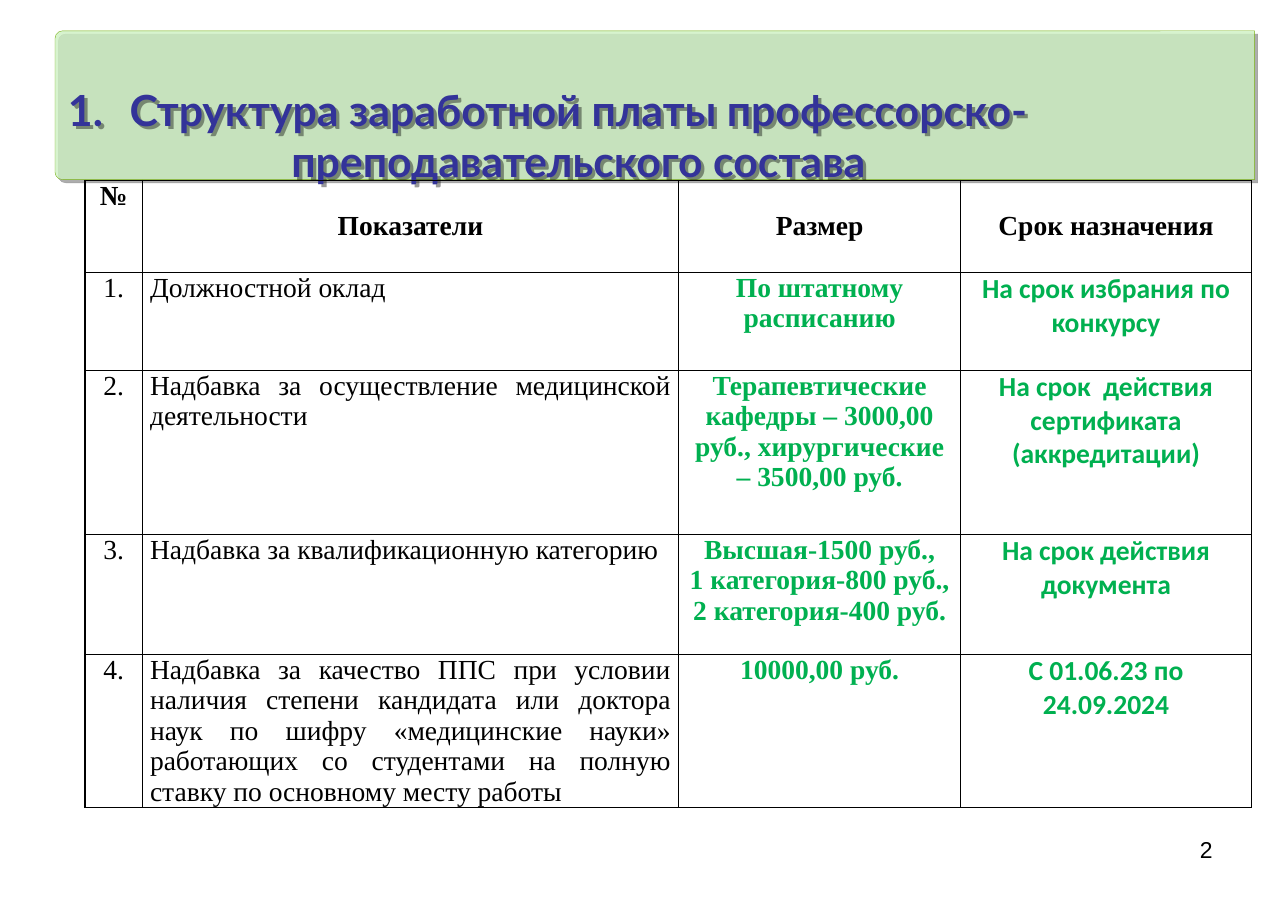
from lxml.etree import SubElement
from pptx import Presentation
from pptx.dml.color import RGBColor
from pptx.enum.shapes import MSO_SHAPE as Shape
from pptx.enum.text import MSO_ANCHOR as Anchor, MSO_AUTO_SIZE as AutoSize, PP_ALIGN as Align
from pptx.oxml import parse_xml
from pptx.oxml.ns import nsdecls, qn
from pptx.util import Cm, Pt

BLACK = RGBColor(0x00, 0x00, 0x00)
GREEN = RGBColor(0x00, 0xB0, 0x50)
BANNER_FILL = RGBColor(0xCD, 0xF0, 0xC2)
BANNER_LINE = RGBColor(0x78, 0xB0, 0x12)
TITLE_BLUE = RGBColor(0x33, 0x33, 0x99)
SERIF = "Times New Roman"


def write_text(text_frame, text, font="Arial", size=18, color=BLACK, bold=False, align=Align.CENTER):
    """Fill the frame with one formatted paragraph per line of text."""
    text_frame.text = text
    for paragraph in text_frame.paragraphs:
        paragraph.alignment = align
        for run in paragraph.runs:
            run.font.name = font
            run.font.size = Pt(size)
            run.font.bold = bold
            run.font.color.rgb = color


def add_shadow(shape):
    shape._element.spPr.append(parse_xml(
        f'<a:effectLst {nsdecls("a")}><a:outerShdw dist="38100" dir="2700000" algn="tl" rotWithShape="0">'
        '<a:srgbClr val="000000"><a:alpha val="40000"/></a:srgbClr></a:outerShdw></a:effectLst>'))


presentation = Presentation()
presentation.slide_width, presentation.slide_height = Cm(29.7), Cm(21)
slide = presentation.slides.add_slide(presentation.slide_layouts[5])

# Banner with rounded left corners: an upright shape turned on its side
banner_left, banner_top, banner_width, banner_height = 1.27, 0.71, 27.66, 3.43
banner = slide.shapes.add_shape(
    Shape.ROUND_2_SAME_RECTANGLE,
    Cm(banner_left + (banner_width - banner_height) / 2),
    Cm(banner_top + (banner_height - banner_width) / 2),
    Cm(banner_height), Cm(banner_width))
banner.rotation = 270
banner.adjustments[0] = 0.05
banner.fill.solid()
banner.fill.fore_color.rgb = BANNER_FILL
fill_color = banner._element.spPr.find(qn("a:solidFill"))[0]
SubElement(fill_color, qn("a:alpha"), val="80000")
banner.line.color.rgb = BANNER_LINE
banner.line.width = Pt(0.25)
add_shadow(banner)

# Title
title = slide.shapes.title
title.left, title.top, title.width, title.height = Cm(1), Cm(banner_top), Cm(23.25), Cm(3.58)
title.fill.background()
add_shadow(title)
title_frame = title.text_frame
title_frame.auto_size = AutoSize.NONE
title_frame.word_wrap = True
title_frame.vertical_anchor = Anchor.BOTTOM
title_frame.margin_left = title_frame.margin_right = Cm(0.25)
title_frame.margin_top = title_frame.margin_bottom = 0
write_text(title_frame, "Структура заработной платы профессорско-преподавательского состава",
           font="Lato", size=28, color=TITLE_BLUE, bold=True)
numbering = title_frame.paragraphs[0]._p.get_or_add_pPr()
numbering.set("marL", str(Cm(1.42)))
numbering.set("indent", str(Cm(-1.42)))
SubElement(numbering, qn("a:buFont"), typeface="Lato")
SubElement(numbering, qn("a:buAutoNum"), type="arabicPeriod")
slide.shapes._spTree.append(title._element)

# Table
HEADERS = ["№", "Показатели", "Размер", "Срок назначения"]
ROWS = [
    ["1.", "Должностной оклад", "По штатному расписанию", "На срок избрания по конкурсу"],
    ["2.", "Надбавка за осуществление медицинской деятельности",
     "Терапевтические кафедры – 3000,00 руб., хирургические – 3500,00 руб.",
     "На срок  действия сертификата (аккредитации)"],
    ["3.", "Надбавка за квалификационную категорию",
     "Высшая-1500 руб.,\n1 категория-800 руб.,\n2 категория-400 руб.", "На срок действия документа"],
    ["4.", "Надбавка за качество ППС при условии наличия степени кандидата или доктора наук "
     "по шифру «медицинские науки» работающих со студентами на полную ставку "
     "по основному месту работы", "10000,00 руб.", "С 01.06.23 по 24.09.2024"],
]
COLUMN_WIDTHS = [1.32, 12.37, 6.5, 6.71]
ROW_HEIGHTS = [2.12, 2.26, 3.78, 2.77, 3.53]
HEADER_FORMAT = dict(font=SERIF, bold=True)
COLUMN_FORMATS = [
    dict(font=SERIF),
    dict(font=SERIF, align=Align.JUSTIFY),
    dict(font=SERIF, color=GREEN, bold=True),
    dict(font="Calibri", color=GREEN, bold=True),
]

table = slide.shapes.add_table(
    len(ROW_HEIGHTS), len(COLUMN_WIDTHS), Cm(1.96), Cm(4.16),
    Cm(sum(COLUMN_WIDTHS)), Cm(sum(ROW_HEIGHTS))).table
table.first_row = table.horz_banding = False
for column, width in zip(table.columns, COLUMN_WIDTHS):
    column.width = Cm(width)
for row, height in zip(table.rows, ROW_HEIGHTS):
    row.height = Cm(height)

for row_index, texts in enumerate([HEADERS] + ROWS):
    for column_index, text in enumerate(texts):
        cell = table.cell(row_index, column_index)
        cell.margin_left = cell.margin_right = Cm(0.18)
        cell.margin_top = cell.margin_bottom = 0
        is_header = row_index == 0
        cell.vertical_anchor = Anchor.MIDDLE if is_header and column_index else Anchor.TOP
        write_text(cell.text_frame, text, **(HEADER_FORMAT if is_header else COLUMN_FORMATS[column_index]))
        for side in ("lnL", "lnR", "lnT", "lnB"):
            cell._tc.get_or_add_tcPr().append(parse_xml(
                f'<a:{side} {nsdecls("a")} w="12700"><a:solidFill><a:srgbClr val="{BLACK}"/>'
                f'</a:solidFill></a:{side}>'))
        cell.fill.background()

# Page number
page_number = slide.shapes.add_textbox(Cm(21.28), Cm(19.13), Cm(6.93), Cm(1.45))
page_number.text_frame.word_wrap = True
write_text(page_number.text_frame, "2", size=15, align=Align.RIGHT)

presentation.save("out.pptx")
